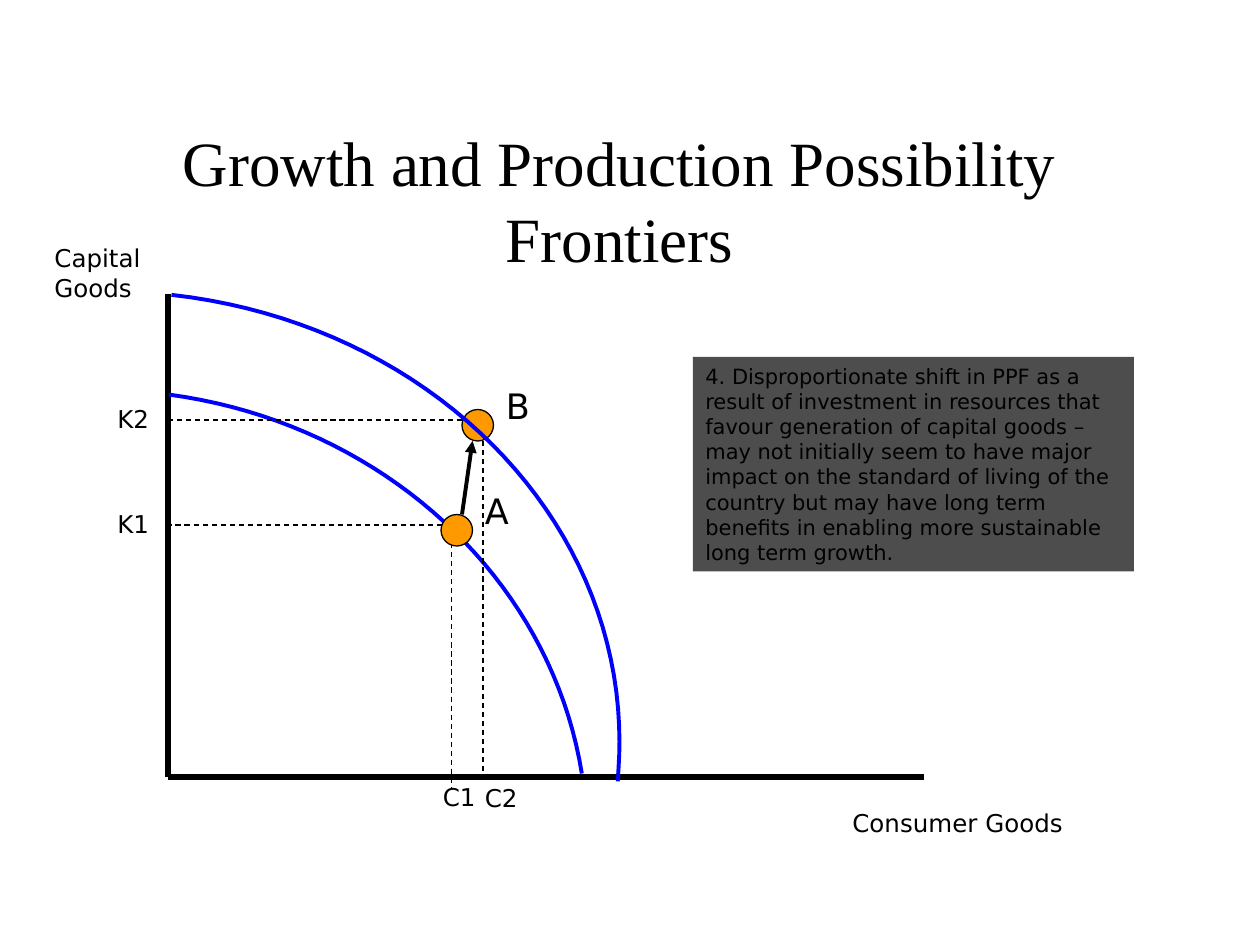
from dataclasses import dataclass

import lxml.etree
import pptx
import pptx.dml.color
import pptx.enum.dml
import pptx.enum.shapes
import pptx.enum.text
import pptx.oxml.ns
import pptx.util

Pt = pptx.util.Pt
SANS = "DejaVu Sans"
BLACK, BLUE, ORANGE, GREY = "000000", "0000FF", "FF9900", "4D4D4D"
LEFT, BASE = 96, 444  # the axes meet here

Point = tuple[float, float]


@dataclass
class Label:
    text: str
    x: float
    y: float
    w: float
    h: float = 24
    size: float = 14
    wrap: bool = False


@dataclass
class Line:
    start: Point
    end: Point
    width: float = 0.75
    dash: bool = False
    arrow: bool = False


def color(code: str):
    return pptx.dml.color.RGBColor.from_string(code)


def write(shape, text: str, *, size: float = 14, font: str = SANS,
          wrap: bool = True, align=pptx.enum.text.PP_ALIGN.LEFT,
          anchor=pptx.enum.text.MSO_ANCHOR.TOP) -> None:
    frame = shape.text_frame
    frame.text = text
    frame.word_wrap = wrap
    frame.auto_size = pptx.enum.text.MSO_AUTO_SIZE.NONE
    frame.vertical_anchor = anchor
    para = frame.paragraphs[0]
    para.alignment = align
    for run in para.runs:
        run.font.name = font
        run.font.size = Pt(size)
        run.font.color.rgb = color(BLACK)


def add_label(slide, item: Label) -> None:
    box = slide.shapes.add_textbox(Pt(item.x), Pt(item.y), Pt(item.w), Pt(item.h))
    write(box, item.text, size=item.size, wrap=item.wrap)


def add_line(slide, item: Line) -> None:
    line = slide.shapes.add_connector(
        pptx.enum.shapes.MSO_CONNECTOR.STRAIGHT,
        *(Pt(v) for v in item.start + item.end))
    line.line.color.rgb = color(BLACK)
    line.line.width = Pt(item.width)
    if item.dash:
        line.line.dash_style = pptx.enum.dml.MSO_LINE.DASH
    qn = pptx.oxml.ns.qn
    props = line._element.spPr
    if item.arrow:
        lxml.etree.SubElement(props.find(qn("a:ln")), qn("a:tailEnd"), type="triangle")
    lxml.etree.SubElement(props, qn("a:effectLst"))


def add_shape(slide, kind, x: float, y: float, w: float, h: float, fill: str):
    shape = slide.shapes.add_shape(kind, Pt(x), Pt(y), Pt(w), Pt(h))
    shape.shadow.inherit = False
    shape.fill.solid()
    shape.fill.fore_color.rgb = color(fill)
    return shape


def add_dot(slide, x: float, y: float) -> None:
    dot = add_shape(slide, pptx.enum.shapes.MSO_SHAPE.OVAL, x, y, 18, 18, ORANGE)
    dot.line.color.rgb = color(BLACK)
    dot.line.width = Pt(0.75)


def bezier(a: Point, b: Point, c: Point, d: Point, steps: int = 40) -> list[Point]:
    """Sample a cubic curve, leaving out its first point."""
    points = []
    for i in range(1, steps + 1):
        t = i / steps
        u = 1 - t
        mix = (u ** 3, 3 * u * u * t, 3 * u * t * t, t ** 3)
        points.append(tuple(sum(m * v for m, v in zip(mix, axis))
                            for axis in zip(a, b, c, d)))
    return points


def add_curve(slide, *knots: Point) -> None:
    """Draw joined cubic curves; knots are a start, then three points a curve."""
    points = []
    for i in range(0, len(knots) - 1, 3):
        points += bezier(*knots[i:i + 4])
    path = slide.shapes.build_freeform(*(Pt(v) for v in knots[0]), scale=1.0)
    path.add_line_segments([(Pt(x), Pt(y)) for x, y in points], close=False)
    curve = path.convert_to_shape()
    curve.shadow.inherit = False
    curve.fill.background()
    curve.line.color.rgb = color(BLUE)
    curve.line.width = Pt(2.25)


AXES = [
    Line((LEFT, 168), (LEFT, BASE), width=3),
    Line((LEFT, BASE), (528, BASE), width=3),
]
GUIDES = [
    Line((264, 294), (270, 252), width=2.25, arrow=True),
    Line((264, 240), (LEFT, 240), dash=True),
    Line((276, 252), (276, BASE), dash=True),
    Line((258, 300), (LEFT, 300), dash=True),
    Line((258, 300), (258, 450), dash=True),
]
LABELS = [
    Label("C2", 270, 444, 42, wrap=True),
    Label("Consumer Goods", 480, 458, 134.5),
    Label("A", 270, 276, 36, 31, size=20, wrap=True),
    Label("B", 282, 216, 30, 31, size=20, wrap=True),
    Label("K2", 60, 227.5, 33),
    Label("K1", 60, 287.5, 33),
    Label("C1", 246, 443.5, 33),
    Label("Capital\vGoods", 24, 135.5, 111.5, wrap=True),
]
NOTE = (
    "4. Disproportionate shift in PPF as a result of investment in resources "
    "that favour generation of capital goods – may not initially seem to have "
    "major impact on the standard of living of the country but may have long "
    "term benefits in enabling more sustainable long term growth."
)


def main() -> None:
    deck = pptx.Presentation()
    deck.slide_width, deck.slide_height = Pt(720), Pt(540)
    slide = deck.slides.add_slide(deck.slide_layouts[5])

    title = slide.shapes.title
    title.left, title.top, title.width, title.height = Pt(48), Pt(84), Pt(612), Pt(60)
    write(title, "Growth and Production Possibility Frontiers", size=36,
          font="Times New Roman", align=pptx.enum.text.PP_ALIGN.CENTER,
          anchor=pptx.enum.text.MSO_ANCHOR.MIDDLE)

    for line in AXES:
        add_line(slide, line)
    add_curve(slide, (96.5, 225.5), (219, 242), (314.5, 330.5), (332.5, 442))
    add_dot(slide, 264, 234)
    for line in GUIDES:
        add_line(slide, line)
    add_dot(slide, 252, 294)
    for label in LABELS:
        add_label(slide, label)
    add_curve(slide, (98, 168.5), (245, 185), (354, 294.5), (354, 424),
              (354, 431.5), (353.5, 438.5), (353, 446.5))

    note = add_shape(slide, pptx.enum.shapes.MSO_SHAPE.RECTANGLE,
                     396, 204, 252, 122.5, GREY)
    note.line.fill.background()
    write(note, NOTE, size=12)

    deck.save("out.pptx")


if __name__ == "__main__":
    main()
